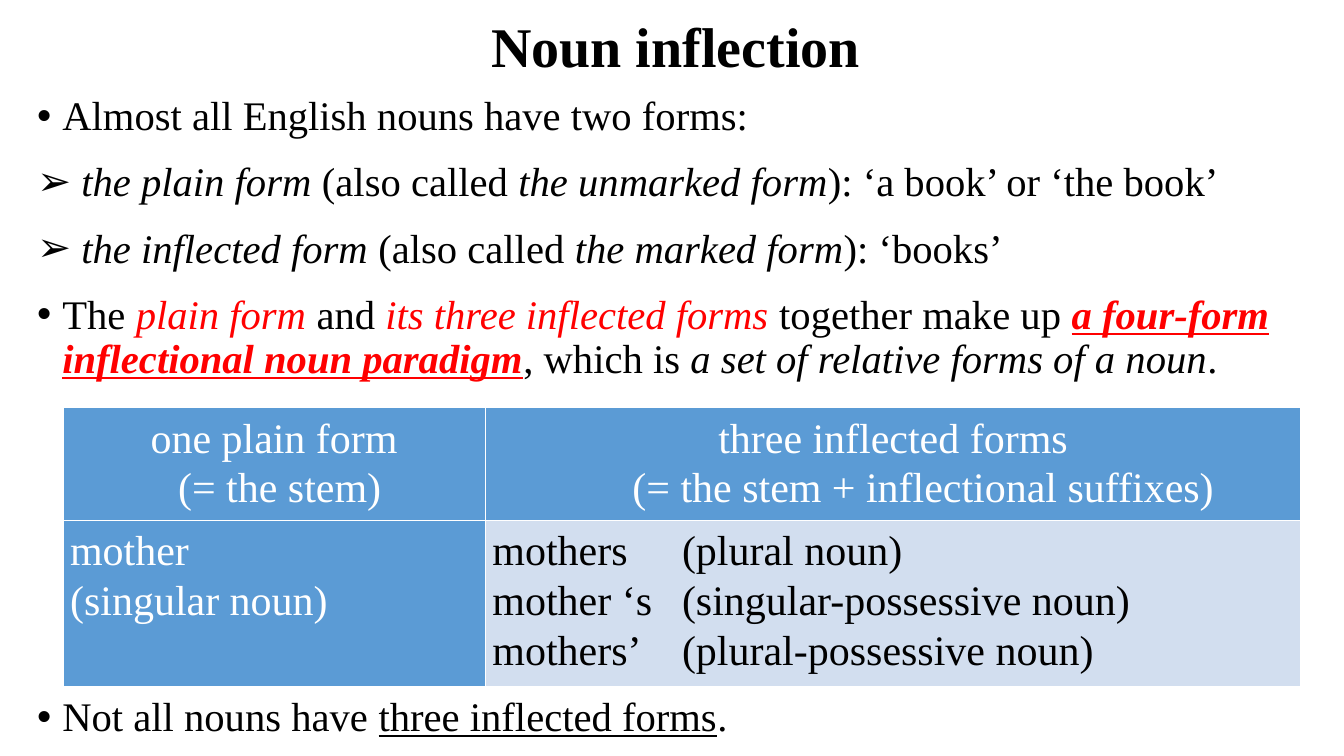
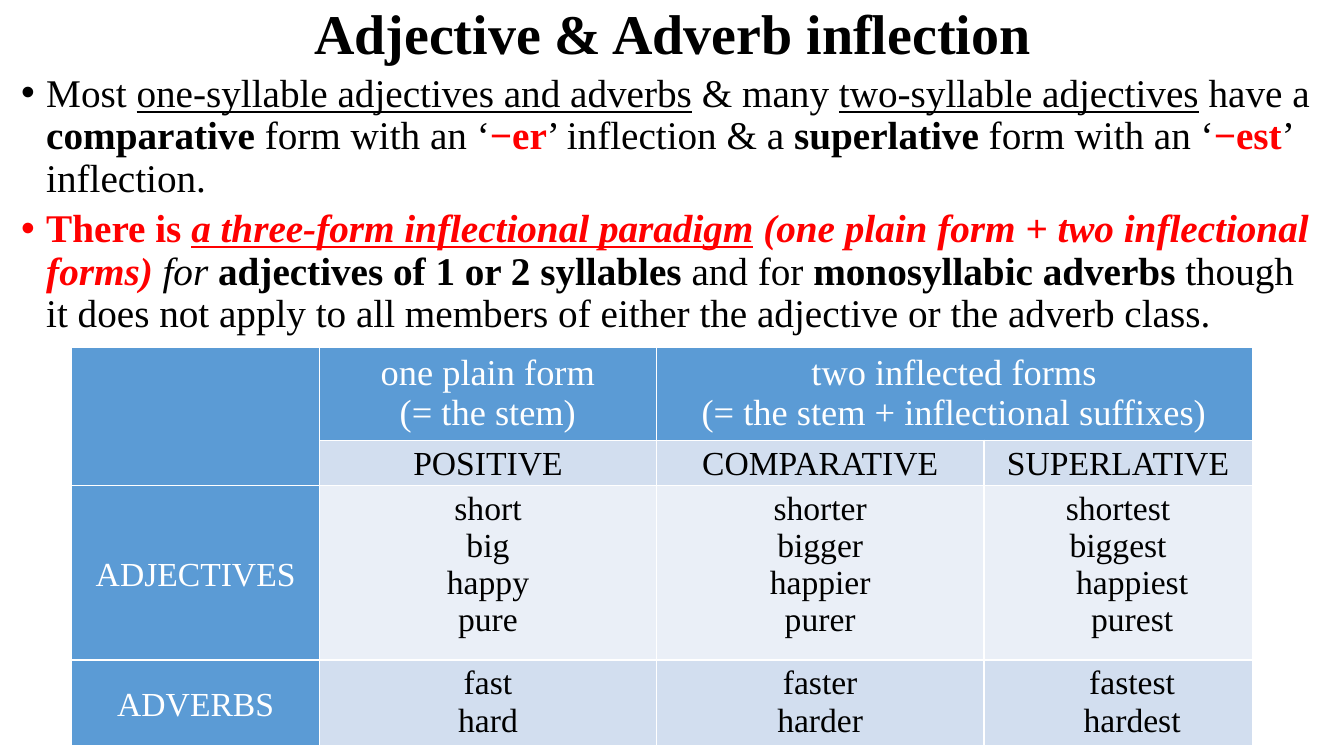
"""Build two slides on English inflection: nouns, then adjectives and adverbs."""
import pptx
import pptx.dml.color
import pptx.enum.text
import pptx.oxml
import pptx.oxml.ns
import pptx.util
import lxml.etree

FONT = "Times New Roman"
BLACK, WHITE, RED = "000000", "FFFFFF", "FF0000"
BLUE, BANDS = "5B9BD5", ("EAEFF7", "D2DEEF")
NS = pptx.oxml.ns.nsdecls("a")
LEFT, CENTER = pptx.enum.text.PP_ALIGN.LEFT, pptx.enum.text.PP_ALIGN.CENTER
MIDDLE, TOP = pptx.enum.text.MSO_ANCHOR.MIDDLE, pptx.enum.text.MSO_ANCHOR.TOP


def paint(target, color):
    target.rgb = pptx.dml.color.RGBColor.from_string(color)


def write(p, runs, size, color=BLACK):
    """Fill a paragraph from (text, style) runs; style letters: b, i, u, r for red."""
    for text, style in runs:
        r = p.add_run()
        r.text = text
        r.font.name, r.font.size = FONT, pptx.util.Pt(size)
        r.font.bold, r.font.italic, r.font.underline = ("b" in style, "i" in style, "u" in style)
        paint(r.font.color, RED if "r" in style else color)


prs = pptx.Presentation()
prs.slide_width, prs.slide_height = pptx.util.Inches(13.33), pptx.util.Inches(7.5)
col, row = prs.slide_width / 100, prs.slide_height / 100

slides = [
    {
        "title": ("Noun inflection", (7.13, 1.33, 86.27, 10.4)),
        "size": 29, "before": 10, "after": 6,
        "bodies": [
            ((2.03, 12, 96.55, 40), [
                ("•", [("Almost all English nouns have two forms:", "")]),
                ("➢", [(" the plain form", "i"), (" (also called ", ""), ("the unmarked form", "i"),
                       ("): ‘a book’ or ‘the book’", "")]),
                ("➢", [(" the inflected form", "i"), (" (also called ", ""), ("the marked form", "i"),
                       ("): ‘books’", "")]),
                ("•", [("The ", ""), ("plain form ", "ir"), ("and ", ""),
                       ("its three inflected forms ", "ir"), ("together make up ", ""),
                       ("a four-form inflectional noun paradigm", "biur"), (", which is ", ""),
                       ("a set of relative forms of a noun", "i"), (".", "")]),
            ]),
            ((2.03, 91.5, 96.55, 8), [
                ("•", [("Not all nouns have ", ""), ("three inflected forms", "u"), (".", "")]),
            ]),
        ],
        "at": (4.69, 53.87), "cols": (31.43, 60.69), "rows": (13.07, 19.07),
        "sizes": (30, 30), "spacing": 1.07, "aligns": (CENTER, LEFT), "label_anchor": TOP, "merges": [],
        "cells": [
            [[("one plain form", 0), ("(= the stem)", 0.11)],
             [("three inflected forms", 0), ("(= the stem + inflectional suffixes)", 0.6)]],
            [[("mother", 0), ("(singular noun)", 0)],
             [("mothers\t(plural noun)", 0), ("mother ‘s\t(singular-possessive noun)", 0),
              ("mothers’\t(plural-possessive noun)", 0)]],
        ],
    },
    {
        "title": ("Adjective & Adverb inflection", (6.9, 0.8, 86.27, 8.13)),
        "size": 28, "before": 6, "after": 0,
        "bodies": [
            ((0.83, 9.07, 98.05, 37), [
                ("•", [("Most ", ""), ("one-syllable adjectives and adverbs", "u"), (" & many ", ""),
                       ("two-syllable adjectives", "u"), (" have a ", ""), ("comparative", "b"),
                       (" form with an ‘", ""), ("−er", "br"), ("’ inflection & a ", ""),
                       ("superlative", "b"), (" form with an ‘", ""), ("−est", "br"),
                       ("’ inflection.", "")]),
                ("•", [("There is ", "br"), ("a three-form inflectional paradigm", "biur"),
                       (" (one plain form + two inflectional forms) ", "bir"), ("for ", "i"),
                       ("adjectives of 1 or 2 syllables", "b"), (" and for ", ""),
                       ("monosyllabic adverbs", "b"),
                       (" though it does not apply to all members of either the adjective"
                        " or the adverb class.", "")]),
            ]),
        ],
        "at": (5.33, 46), "cols": (18.45, 25.06, 24.38, 19.95), "rows": (10.8, 4.53, 23.07, 7.73),
        "sizes": (26, 24, 24, 24), "spacing": 1.0, "aligns": (CENTER,) * 4, "label_anchor": MIDDLE,
        "merges": [((0, 0), (1, 0)), ((0, 2), (0, 3))],
        "cells": [
            [[], [("one plain form", 0), ("(= the stem)", 0)],
             [("two inflected forms", 0), ("(= the stem + inflectional suffixes)", 0)], []],
            [[], [("POSITIVE", 0)], [("COMPARATIVE", 0)], [("SUPERLATIVE", 0)]],
            [[("ADJECTIVES", 0)],
             [("short", 0), ("big", 0), ("happy", 0), ("pure", 0)],
             [("shorter", 0), ("bigger", 0), ("happier", 0), ("purer", 0)],
             [("shortest", 0), ("biggest", 0), ("happiest", 0.28), ("purest", 0.28)]],
            [[("ADVERBS", 0)], [("fast", 0), ("hard", 0)], [("faster", 0), ("harder", 0)],
             [("fastest", 0.28), ("hardest", 0.28)]],
        ],
    },
]

for data in slides:
    s = prs.slides.add_slide(prs.slide_layouts[6])

    title, (x, y, w, h) = data["title"]
    tf = s.shapes.add_textbox(int(x * col), int(y * row), int(w * col), int(h * row)).text_frame
    tf.word_wrap, tf.vertical_anchor = True, MIDDLE
    tf.margin_top = tf.margin_bottom = 0
    p = tf.paragraphs[0]
    p.alignment, p.line_spacing = CENTER, 0.9
    write(p, [(title, "b")], 40)

    for (x, y, w, h), items in data["bodies"]:
        tf = s.shapes.add_textbox(int(x * col), int(y * row), int(w * col), int(h * row)).text_frame
        tf.word_wrap = True
        for i, (bullet, runs) in enumerate(items):
            p = tf.add_paragraph() if i else tf.paragraphs[0]
            p.line_spacing = 0.9
            p.space_before, p.space_after = pptx.util.Pt(data["before"]), pptx.util.Pt(data["after"])
            pPr = p._p.get_or_add_pPr()
            pPr.set("marL", str(pptx.util.Inches(0.25)))
            pPr.set("indent", str(pptx.util.Inches(-0.25)))
            pPr.append(pptx.oxml.parse_xml(f'<a:buFont {NS} typeface="Arial"/>'))
            pPr.append(pptx.oxml.parse_xml(f'<a:buChar {NS} char="{bullet}"/>'))
            write(p, runs, data["size"])

    x, y = data["at"]
    tbl = s.shapes.add_table(len(data["rows"]), len(data["cols"]), int(x * col), int(y * row),
                             int(sum(data["cols"]) * col), int(sum(data["rows"]) * row)).table
    tbl.first_row = tbl.horz_banding = False
    for c, w in enumerate(data["cols"]):
        tbl.columns[c].width = int(w * col)
    for r, h in enumerate(data["rows"]):
        tbl.rows[r].height = int(h * row)
    for first, last in data["merges"]:
        tbl.cell(*first).merge(tbl.cell(*last))

    for r, cells in enumerate(data["cells"]):
        for c, lines in enumerate(cells):
            cell = tbl.cell(r, c)
            header = r == 0 or c == 0
            cell.margin_left = cell.margin_right = pptx.util.Inches(0.07)
            cell.margin_top, cell.margin_bottom = pptx.util.Inches(0.05), 0
            cell.vertical_anchor = data["label_anchor"] if c == 0 else TOP
            tcPr = cell._tc.get_or_add_tcPr()
            for side in ("lnL", "lnR", "lnT", "lnB"):
                tcPr.append(pptx.oxml.parse_xml(
                    f'<a:{side} {NS} w="12700"><a:solidFill><a:srgbClr val="{WHITE}"/></a:solidFill></a:{side}>'))
            cell.fill.solid()
            paint(cell.fill.fore_color, BLUE if header else BANDS[r % 2])
            tf = cell.text_frame
            for i, (text, indent) in enumerate(lines):
                p = tf.add_paragraph() if i else tf.paragraphs[0]
                p.alignment, p.line_spacing = data["aligns"][r], data["spacing"]
                pPr = p._p.get_or_add_pPr()
                pPr.set("marL", str(pptx.util.Inches(indent)))
                if "\t" in text:
                    stop = pptx.util.Inches(1.88)
                    pPr.append(pptx.oxml.parse_xml(
                        f'<a:tabLst {NS}><a:tab pos="{stop}" algn="l"/></a:tabLst>'))
                write(p, [(text, "")], data["sizes"][r], WHITE if header else BLACK)

prs.save("out.pptx")
